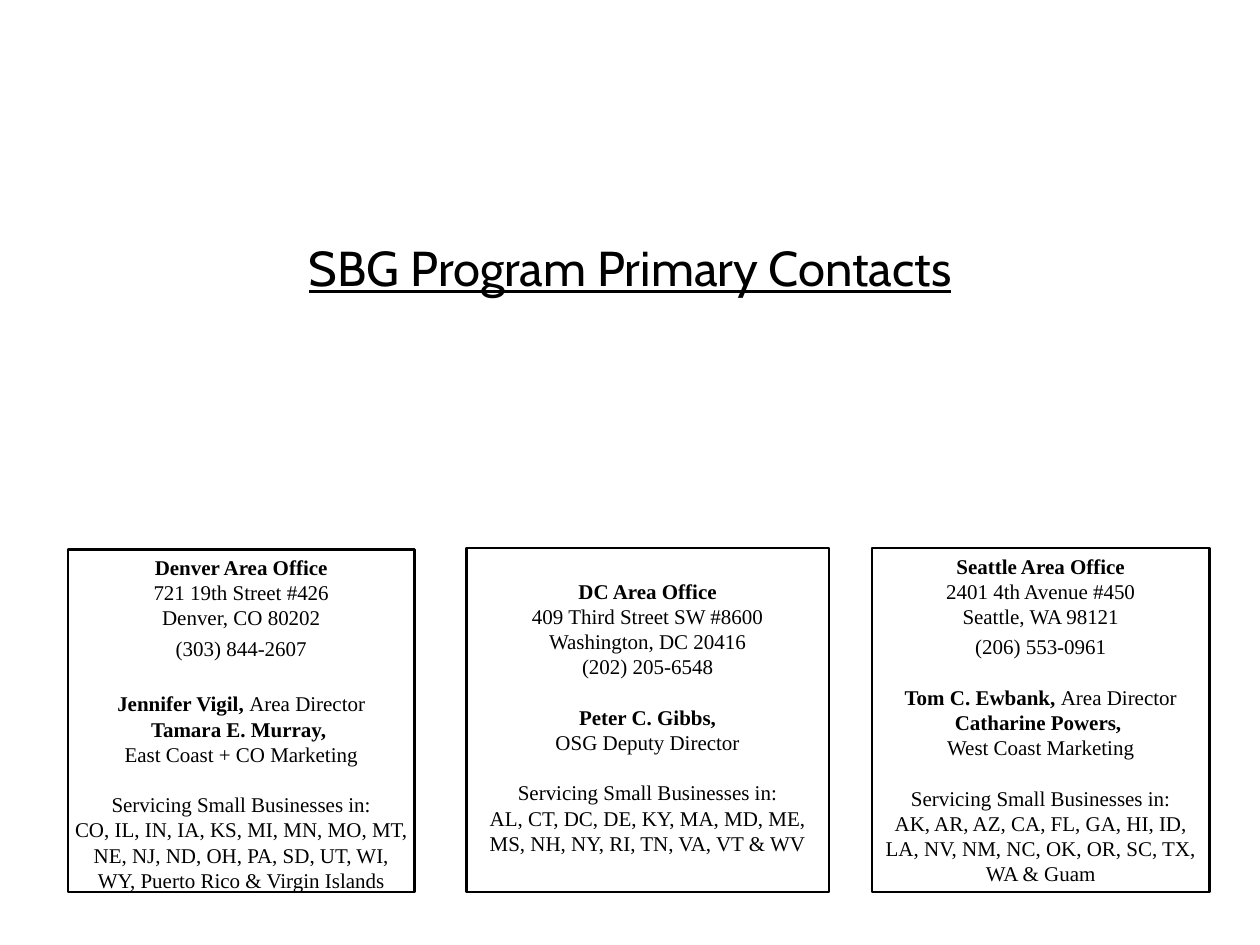
from pptx import Presentation
from pptx.dml.color import RGBColor
from pptx.enum.shapes import MSO_SHAPE as Shape
from pptx.enum.text import MSO_ANCHOR as Anchor, PP_ALIGN as Align
from pptx.util import Inches, Pt

BLACK = RGBColor(0, 0, 0)
TITLE = "SBG Program Primary Contacts"
SERVES = "Servicing Small Businesses in:"
LINE = 14.4  # height of one text line, in points
PAD = 0.04

# Each office: place (left, top, width, height), top inset,
# and lines of (space before, bold text, plain text).
OFFICES = [
    ((0.54, 4.36, 2.75, 2.72), PAD, [
        (0, "Denver Area Office", ""),
        (0, "", "721 19th Street #426"),
        (0, "", "Denver, CO 80202"),
        (3, "", "(303) 844-2607"),
        (LINE + 3, "Jennifer Vigil, ", "Area Director"),
        (0, "Tamara E. Murray, ", ""),
        (0, "", "East Coast + CO Marketing"),
        (LINE, "", SERVES),
        (0, "", "CO, IL, IN, IA, KS, MI, MN, MO, MT, NE, NJ, ND, OH, PA, "
                "SD, UT, WI, WY, Puerto Rico & Virgin Islands"),
    ]),
    ((3.7, 4.35, 2.88, 2.73), PAD + LINE / 72, [
        (0, "DC Area Office", ""),
        (0, "", "409 Third Street SW #8600"),
        (0, "", "Washington, DC 20416"),
        (0, "", "(202) 205-6548"),
        (LINE, "Peter C. Gibbs,", ""),
        (0, "", "OSG Deputy Director"),
        (LINE, "", SERVES),
        (0, "", "AL, CT, DC, DE, KY, MA, MD, ME, MS, NH, NY, RI, TN, VA, "
                "VT & WV"),
    ]),
    ((6.92, 4.35, 2.68, 2.73), PAD, [
        (0, "Seattle Area Office", ""),
        (0, "", "2401 4th Avenue #450"),
        (0, "", "Seattle, WA 98121"),
        (3, "", "(206) 553-0961"),
        (LINE, "Tom C. Ewbank, ", "Area Director"),
        (0, "Catharine Powers, ", ""),
        (0, "", "West Coast Marketing"),
        (LINE, "", SERVES),
        (0, "", "AK, AR, AZ, CA, FL, GA, HI, ID, LA, NV, NM, NC, OK, OR, "
                "SC, TX, WA & Guam"),
    ]),
]


def add_run(para, text, face, size, bold=False):
    run = para.add_run()
    run.text = text
    font = run.font
    font.name, font.size, font.bold = face, Pt(size), bold
    font.color.rgb = BLACK
    return run


def add_title(slide):
    title = slide.shapes.title
    title.left, title.top = Inches(0.5), Inches(1.58)
    title.width, title.height = Inches(9), Inches(1.08)
    title.text_frame.vertical_anchor = Anchor.MIDDLE
    para = title.text_frame.paragraphs[0]
    para.alignment = Align.CENTER
    add_run(para, TITLE, "Cabin", 28).font.underline = True


def add_office(slide, place, inset, lines):
    box = slide.shapes.add_shape(Shape.RECTANGLE, *map(Inches, place))
    box.shadow.inherit = False
    box.fill.background()
    box.line.color.rgb = BLACK
    box.line.width = Pt(1.5)
    frame = box.text_frame
    frame.word_wrap = True
    frame.vertical_anchor = Anchor.TOP
    frame.margin_left = frame.margin_right = frame.margin_bottom = Inches(PAD)
    frame.margin_top = Inches(inset)
    for i, (space, strong, plain) in enumerate(lines):
        para = frame.add_paragraph() if i else frame.paragraphs[0]
        para.alignment = Align.CENTER
        if space:
            para.space_before = Pt(space)
        for text, bold in ((strong, True), (plain, False)):
            if text:
                add_run(para, text, "Times New Roman", 12, bold)


def main():
    deck = Presentation()
    deck.slide_width, deck.slide_height = Inches(10), Inches(7.5)
    slide = deck.slides.add_slide(deck.slide_layouts[5])
    add_title(slide)
    for office in OFFICES:
        add_office(slide, *office)
    deck.save("out.pptx")


if __name__ == "__main__":
    main()
